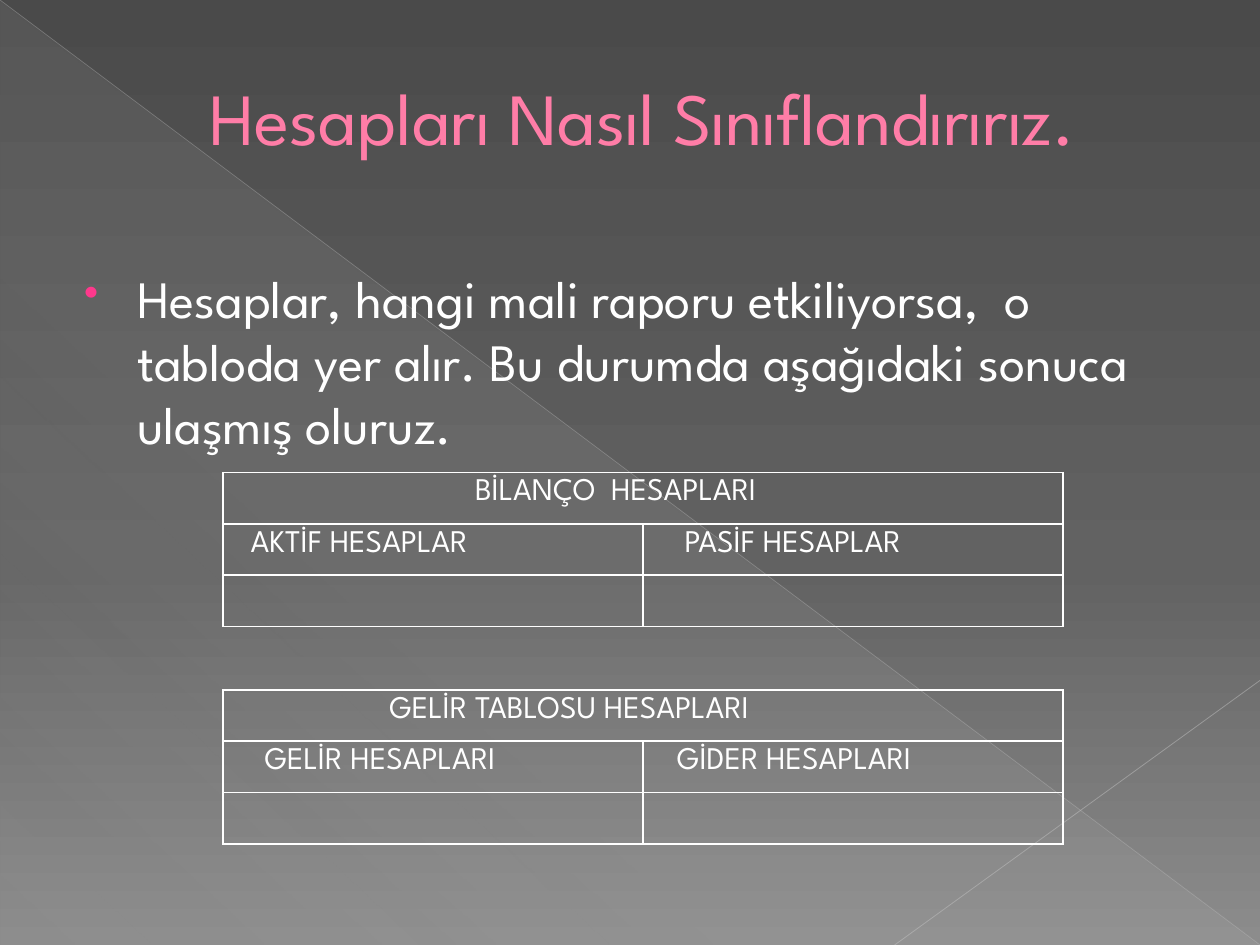
from lxml.etree import SubElement
from pptx import Presentation
from pptx.dml.color import RGBColor
from pptx.enum.shapes import MSO_CONNECTOR, MSO_SHAPE
from pptx.enum.text import MSO_ANCHOR, MSO_AUTO_SIZE, PP_ALIGN
from pptx.oxml.ns import qn
from pptx.util import Emu, Inches, Pt

COLORS = {
    "top": "4A4A4A", "middle": "626262", "bottom": "8C8C8C",
    "veil": "D2D2D2", "diagonal": "BFBFBF", "corner": "C6C6C6",
    "title": "FF7DA7", "bullet": "FF388C", "text": "FFFFFF",
}
FONT = "League Spartan"


def add_node(parent, tag, **values):
    """Append a DrawingML element with the given attributes."""
    return SubElement(parent, qn(f"a:{tag}"), {key: str(value) for key, value in values.items()})


def add_color(parent, name, opacity=100):
    """Append a named colour with its opacity in percent."""
    color = add_node(parent, "srgbClr", val=COLORS[name])
    if opacity < 100:
        add_node(color, "alpha", val=opacity * 1000)


class SlideBuilder:
    """Draw styled elements on one slide, placed by shares of its size."""

    def __init__(self, width, height):
        self.deck = Presentation()
        self.deck.slide_width, self.deck.slide_height = Inches(width), Inches(height)
        self.page = self.deck.slides.add_slide(self.deck.slide_layouts[5])

    def place(self, *shares):
        """Turn alternating horizontal and vertical shares into lengths."""
        sizes = (self.deck.slide_width, self.deck.slide_height) * 2
        return [Emu(round(share * size)) for share, size in zip(shares, sizes)]

    def gradient(self, fill, owner, stops, angle):
        """Give a fill gradient stops of position, colour and opacity."""
        fill.gradient()
        node = owner.find(f".//{qn('a:gradFill')}")
        node.clear()
        stop_list = add_node(node, "gsLst")
        for position, color, opacity in stops:
            add_color(add_node(stop_list, "gs", pos=position * 1000), color, opacity)
        add_node(node, "lin", ang=angle * 60000, scaled=0)

    def background(self, stops, angle):
        """Paint the slide background."""
        self.gradient(self.page.background.fill, self.page.element, stops, angle)

    def triangle(self, area, stops, angle):
        """Add a borderless right triangle."""
        shape = self.page.shapes.add_shape(MSO_SHAPE.RIGHT_TRIANGLE, *self.place(*area))
        shape.shadow.inherit = False
        shape.line.fill.background()
        self.gradient(shape.fill, shape.element, stops, angle)

    def line(self, ends, color, width, opacity):
        """Add a thin translucent line."""
        line = self.page.shapes.add_connector(MSO_CONNECTOR.STRAIGHT, *self.place(*ends))
        line.line.width = Pt(width)
        line.line.color.rgb = RGBColor.from_string(COLORS[color])
        add_node(line.element.find(f".//{qn('a:srgbClr')}"), "alpha", val=opacity * 1000)
        add_node(line.element.spPr, "effectLst")

    def paragraph(self, frame, text, size, color):
        """Fill one left-aligned paragraph and return it."""
        para = frame.paragraphs[0]
        para.alignment = PP_ALIGN.LEFT
        font = para.font
        if text:
            span = para.add_run()
            span.text = text
            font = span.font
        for name, value in {"name": FONT, "size": Pt(size), "bold": False}.items():
            setattr(font, name, value)
        font.color.rgb = RGBColor.from_string(COLORS[color])
        return para

    def title(self, area, text, size, inset):
        """Move and fill the title placeholder."""
        box = self.page.shapes.title
        for name, value in zip(("left", "top", "width", "height"), self.place(*area)):
            setattr(box, name, value)
        layout = {"word_wrap": True, "auto_size": MSO_AUTO_SIZE.NONE,
                  "vertical_anchor": MSO_ANCHOR.MIDDLE, "margin_left": Inches(inset)}
        for name, value in layout.items():
            setattr(box.text_frame, name, value)
        self.paragraph(box.text_frame, text, size, "title")

    def bullet(self, area, text, size):
        """Add a text box with one bulleted paragraph."""
        box = self.page.shapes.add_textbox(*self.place(*area))
        box.text_frame.word_wrap = True
        para = self.paragraph(box.text_frame, text, size, "text")
        para.space_before = Pt(size * 0.2)
        props = para._p.get_or_add_pPr()
        props.set("marL", str(Inches(0.49)))
        props.set("indent", str(Inches(-0.42)))
        add_color(add_node(props, "buClr"), "bullet")
        add_node(props, "buSzPct", val=80000)
        add_node(props, "buChar", char="•")

    def cell(self, cell, text, inset):
        """Style one transparent, bordered table cell."""
        cell.margin_left = Inches(inset)
        self.paragraph(cell.text_frame, text, 18, "text")
        props = cell._tc.get_or_add_tcPr()
        for side in ("lnL", "lnR", "lnT", "lnB"):
            border = add_node(props, side, w=Pt(1))
            add_color(add_node(border, "solidFill"), "text")
        cell.fill.background()

    def table(self, area, heading, columns):
        """Add a merged heading, a row of column names and an empty row."""
        table = self.page.shapes.add_table(3, len(columns), *self.place(*area)).table
        table.first_row = table.horz_banding = False
        table.cell(0, 0).merge(table.cell(0, len(columns) - 1))
        blank = ("", 0.1)
        for row, contents in enumerate(((heading, blank), columns, (blank, blank))):
            for column, (text, inset) in enumerate(contents):
                self.cell(table.cell(row, column), text, inset)


def main():
    """Build and save the account classification slide."""
    slide = SlideBuilder(10, 7.5)
    slide.background([(0, "top", 100), (60, "middle", 100), (100, "bottom", 100)], 90)
    slide.triangle((0, 0, 1, 1), [(0, "veil", 10), (70, "veil", 8), (100, "veil", 1)], 133)
    slide.line((0, 0, 1, 1), "diagonal", 0.39, 35)
    slide.line((1, 0.72, 0.71, 1), "corner", 0.47, 45)
    slide.title((0.05, 0.04, 0.915, 1 / 6), "Hesapları Nasıl Sınıflandırırız.", 42, 1.16)
    slide.bullet((0.05, 0.275, 0.9, 2 / 3),
                 "Hesaplar, hangi mali raporu etkiliyorsa,  o tabloda yer alır. "
                 "Bu durumda aşağıdaki sonuca ulaşmış oluruz.", 30)
    tables = [
        (0.5, ("BİLANÇO  HESAPLARI", 2), (("AKTİF HESAPLAR", 0.22), ("PASİF HESAPLAR", 0.33))),
        (0.73, ("GELİR TABLOSU HESAPLARI", 1.32),
         (("GELİR HESAPLARI", 0.33), ("GİDER HESAPLARI", 0.27))),
    ]
    for top, heading, columns in tables:
        slide.table((0.177, top, 2 / 3, 0.163), heading, columns)
    slide.deck.save("out.pptx")


if __name__ == "__main__":
    main()
